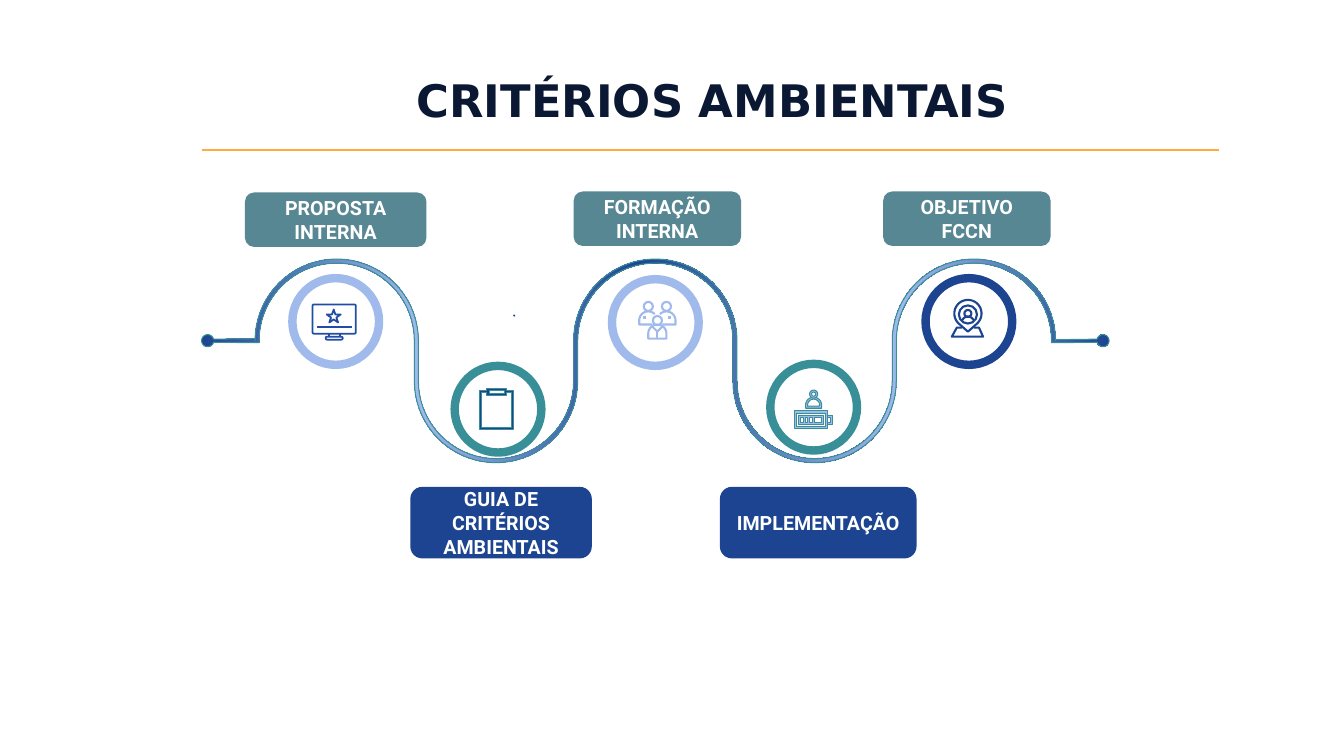
from math import cos, sin, radians
from lxml import etree
from pptx import Presentation, util as u
from pptx.dml import color
from pptx.enum import shapes, text
from pptx.oxml import ns

PX = 9144
NAVY, SKY, TEAL, SLATE = "1C4490", "A1BAEC", "398F98", "578793"
BLUE = "214DA5"
KIND = shapes.MSO_SHAPE


def px(n):
    return u.Emu(round(n * PX))


def rgb(code):
    return color.RGBColor.from_string(code)


def style(shape, fill=None, line=None, width=0.75):
    shape.shadow.inherit = False
    if fill:
        shape.fill.solid()
        shape.fill.fore_color.rgb = rgb(fill)
    else:
        shape.fill.background()
    if line:
        shape.line.color.rgb = rgb(line)
        shape.line.width = u.Pt(width)
    else:
        shape.line.fill.background()


def form(slide, kind, x, y, w, h, **look):
    shape = slide.shapes.add_shape(kind, px(x), px(y), px(w), px(h))
    style(shape, **look)
    return shape


def draw(slide, loops, close=True, **look):
    pen = None
    for loop in loops:
        dots = [(px(x), px(y)) for x, y in loop]
        if pen is None:
            pen = slide.shapes.build_freeform(*dots[0], scale=1.0)
        else:
            pen.move_to(*dots[0])
        pen.add_line_segments(dots[1:], close=close)
    shape = pen.convert_to_shape()
    style(shape, **look)
    return shape


def arc(x, y, r, start, end, steps=36):
    turns = [radians(start + (end - start) * i / steps) for i in range(steps + 1)]
    return [(x + r * cos(t), y + r * sin(t)) for t in turns]


def box(x, y, right, low):
    return [(x, y), (right, y), (right, low), (x, low)]


def ring(slide, x, y, r, hue, width):
    form(slide, KIND.OVAL, x - r, y - r, 2 * r, 2 * r, line=hue, width=width)


def label(slide, words, x, y, w, h, fill):
    shape = form(slide, KIND.ROUNDED_RECTANGLE, x, y, w, h, fill=fill)
    frame = shape.text_frame
    frame.word_wrap = True
    frame.vertical_anchor = text.MSO_ANCHOR.MIDDLE
    frame.margin_left = frame.margin_right = px(10)
    frame.margin_top = frame.margin_bottom = px(10)
    write(frame, words, "Roboto", 14, "FFFFFF")


def write(frame, words, face, size, hue):
    frame.text = words
    para = frame.paragraphs[0]
    para.alignment = text.PP_ALIGN.CENTER
    font = para.runs[0].font
    font.name, font.size, font.bold = face, u.Pt(size), True
    font.color.rgb = rgb(hue)


def head(slide):
    title = slide.shapes.title
    title.left, title.top, title.width, title.height = map(px, (144, 45, 1141, 115))
    title.text_frame.word_wrap = True
    title.text_frame.vertical_anchor = text.MSO_ANCHOR.MIDDLE
    write(title.text_frame, "CRITÉRIOS AMBIENTAIS ", "DejaVu Sans", 32, "0A1833")
    title.text_frame.paragraphs[0].line_spacing = 0.9


def rule(slide):
    line = slide.shapes.add_connector(
        shapes.MSO_CONNECTOR.STRAIGHT, px(200), px(149), px(1209), px(149))
    line.line.color.rgb = rgb("FFAB40")
    line.line.width = u.Pt(1)
    etree.SubElement(line._element.spPr, ns.qn("a:effectLst"))


def edge(shift):
    dots = []
    for i in range(5):
        up = i % 2 == 0
        y, r, end = (338, 79 + shift, 360) if up else (378, 79 - shift, 0)
        dots += arc(334 + 158 * i, y, r, 180, end)
    return dots


def wave(slide):
    loop = (edge(2) + [(1047, 337)] + arc(1094, 338, 6, 195, 525)
            + [(1043, 340)] + edge(-2)[::-1] + [(257, 340)]
            + arc(206, 338, 6, 15, 345) + [(253, 336)])
    shape = draw(slide, [loop], line=TEAL)
    shape.fill.gradient()
    shape.fill.gradient_angle = 0
    stops = shape._element.spPr.find(ns.qn("a:gradFill")).find(ns.qn("a:gsLst"))
    for old in list(stops):
        stops.remove(old)
    for spot, hue in zip((0, 24, 48, 77, 100), (NAVY, SKY, NAVY, SKY, NAVY)):
        stop = etree.SubElement(stops, ns.qn("a:gs"), pos=str(spot * 1000))
        etree.SubElement(stop, ns.qn("a:srgbClr"), val=hue)


def screen(slide):
    for kind, x, y, w, h in (
            (KIND.ROUNDED_RECTANGLE, 310, 302, 43, 29),
            (KIND.RECTANGLE, 326, 331, 11, 3),
            (KIND.ROUNDED_RECTANGLE, 323, 334, 17, 3),
            (KIND.STAR_5_POINT, 324, 307, 14, 13)):
        shape = form(slide, kind, x, y, w, h, line=BLUE, width=1.25)
        if kind == KIND.ROUNDED_RECTANGLE:
            shape.adjustments[0] = 0.05 if h > 9 else 0.5
    form(slide, KIND.RECTANGLE, 315, 324, 34, 1, fill=NAVY, line=BLUE)


def board(slide):
    rim = [(483, 385), (483, 387), (476, 387), (476, 426), (509, 426),
           (509, 387), (502, 387), (502, 385)]
    page = [(507, 389), (507, 424), (478, 424), (478, 389), (483, 389),
            (483, 392), (502, 392), (502, 389)]
    draw(slide, [rim, page, box(486, 387, 500, 390)], fill=NAVY, line=TEAL)


def team(slide):
    side = [(647, 322), (634, 322)] + arc(643, 318, 9, 180, 315)
    arm = [(638, 315), (641, 315)]
    paths = [side, arm] + [[(1304 - x, y) for x, y in part] for part in (side, arm)]
    body = [(652, 336), (643, 336)] + arc(652, 331, 9, 180, 360) + [(661, 336), (652, 336)]
    neck = [(647, 324), (652, 329), (657, 324)]
    paths += [body, neck, [(652, 329), (652, 336)]]
    draw(slide, paths, close=False, line=SKY, width=1.5)
    for x, y in ((643, 304), (661, 304), (652, 318)):
        ring(slide, x, y, 4.5, SKY, 1.5)


def power(slide):
    bust = [arc(807, 402, 8, 180, 360) + [(815, 405), (799, 405)],
            arc(807, 402, 6, 180, 360) + [(812, 403), (801, 403)]]
    face = [arc(807, 391, r, 0, 360) for r in (4, 2)]
    bars = [box(x, 414, end, 419)
            for x, end in ((794, 797), (799, 801), (803, 806), (808, 815))]
    case = [box(788, 407, 821, 425), box(790, 410, 819, 423),
            box(821, 412, 826, 421), box(821, 414, 824, 419)]
    for loops in (bust, face, [box(792, 412, 817, 421)] + bars, case):
        draw(slide, loops, fill=SKY, line=TEAL)


def pin(slide):
    drop = [(960, 329)] + arc(960, 311, 13.5, 132, 408) + [(960, 329)]
    base = [(954, 325), (949, 325), (944, 334), (975, 334), (971, 325), (966, 325)]
    chest = arc(960, 320, 6, 205, 335)
    draw(slide, [drop, base, chest], close=False, line=NAVY, width=1.5)
    ring(slide, 960, 312, 9, NAVY, 1.5)
    ring(slide, 960, 311, 3.5, NAVY, 1.5)


def main():
    deck = Presentation()
    deck.slide_width, deck.slide_height = px(1333), px(750)
    slide = deck.slides.add_slide(deck.slide_layouts[5])
    head(slide)
    wave(slide)
    for x, y, hue in ((333, 319, SKY), (494, 406, TEAL), (650, 320, SKY),
                      (807, 404, TEAL), (961, 319, NAVY)):
        ring(slide, x, y, 43, hue, 6)
    form(slide, KIND.OVAL, 509, 312, 2, 2, fill=NAVY)
    for icon in (screen, board, team, power, pin):
        icon(slide)
    for words, x, y, w, h, fill in (
            ("PROPOSTA INTERNA", 243, 191, 180, 54, SLATE),
            ("GUIA DE CRITÉRIOS AMBIENTAIS", 407, 483, 180, 71, NAVY),
            ("FORMAÇÃO INTERNA", 569, 190, 166, 54, SLATE),
            ("IMPLEMENTAÇÃO", 714, 483, 195, 71, NAVY),
            ("OBJETIVO FCCN", 876, 190, 166, 54, SLATE)):
        label(slide, words, x, y, w, h, fill)
    rule(slide)
    deck.save("out.pptx")


if __name__ == "__main__":
    main()
